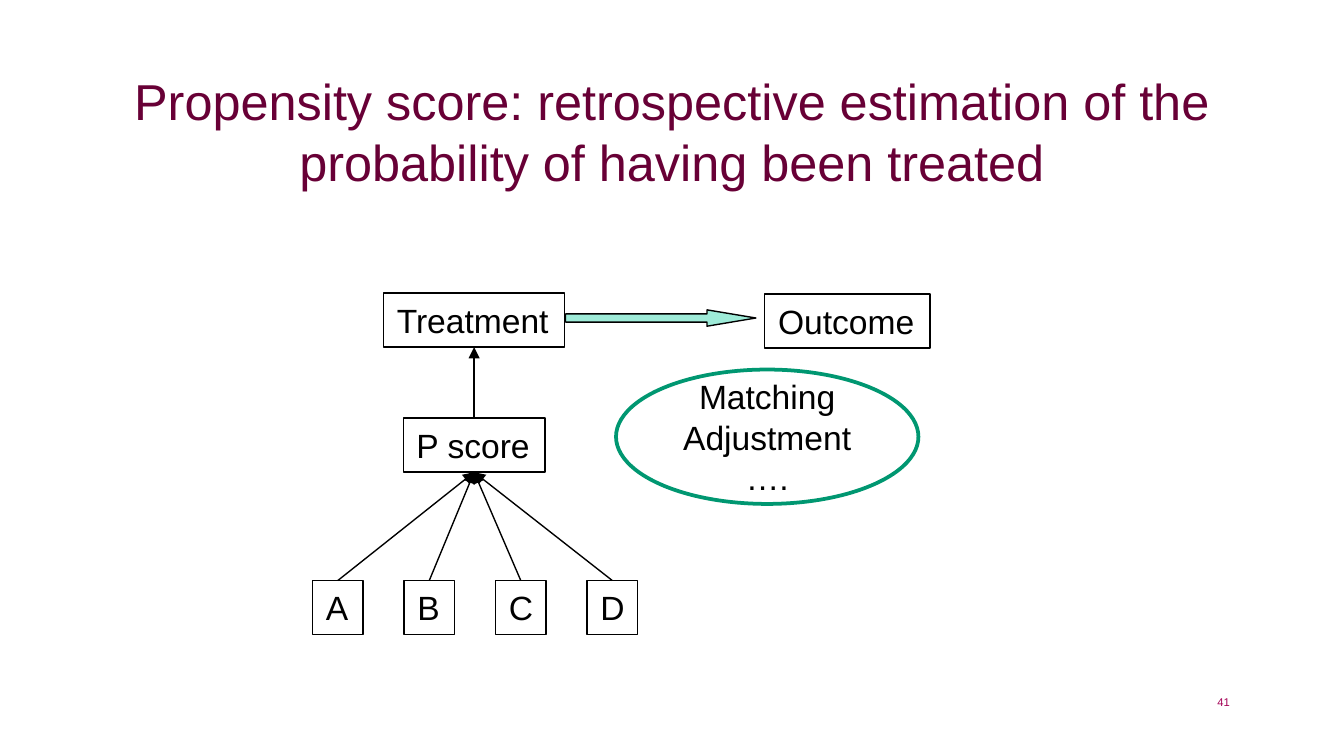
"""Build the propensity score slide."""
from lxml.etree import SubElement
from pptx import Presentation
from pptx.dml.color import RGBColor
from pptx.enum.shapes import MSO_CONNECTOR, MSO_SHAPE
from pptx.enum.text import MSO_ANCHOR, MSO_AUTO_SIZE, PP_ALIGN
from pptx.oxml.ns import qn
from pptx.util import Pt

COLORS = {
    "title": "680036",
    "number": "A40056",
    "ink": "000000",
    "arrow": "00CC99",
    "ring": "009771",
}
BOX_HEIGHT = 29
SCORE_CENTER = 254


def color(name):
    return RGBColor.from_string(COLORS[name])


def write(frame, text, size=18, ink="ink", align=PP_ALIGN.LEFT,
          anchor=MSO_ANCHOR.TOP, wrap=True):
    frame.auto_size = MSO_AUTO_SIZE.NONE
    frame.word_wrap = wrap
    frame.vertical_anchor = anchor
    frame.text = text
    for paragraph in frame.paragraphs:
        paragraph.alignment = align
        paragraph.font.name = "Arial"
        paragraph.font.size = Pt(size)
        paragraph.font.color.rgb = color(ink)


def place(shape, left, top, width, height):
    shape.left, shape.top = Pt(left), Pt(top)
    shape.width, shape.height = Pt(width), Pt(height)


def add_outline(slide, preset, left, top, width, height, line="ink", weight=0.75):
    shape = slide.shapes.add_shape(preset, Pt(left), Pt(top), Pt(width), Pt(height))
    shape.shadow.inherit = False
    shape.fill.background()
    shape.line.color.rgb = color(line)
    shape.line.width = Pt(weight)
    return shape


def add_box(slide, text, center, top, width):
    box = add_outline(slide, MSO_SHAPE.RECTANGLE, center - width / 2, top, width, BOX_HEIGHT)
    write(box.text_frame, text, wrap=False)


def add_link(slide, start, end):
    link = slide.shapes.add_connector(MSO_CONNECTOR.STRAIGHT, *map(Pt, start + end))
    link.line.color.rgb = color("ink")
    link.line.width = Pt(0.75)
    SubElement(link.line._get_or_add_ln(), qn("a:tailEnd"), type="triangle")
    SubElement(link._element.spPr, qn("a:effectLst"))


def add_effect_arrow(slide, left, top, width, height):
    arrow = add_outline(slide, MSO_SHAPE.RIGHT_ARROW, left, top, width, height)
    arrow.adjustments[0], arrow.adjustments[1] = 0.5, 2.99
    arrow.fill.solid()
    arrow.fill.fore_color.rgb = color("arrow")
    tint = arrow._element.spPr.find(qn("a:solidFill")).find(qn("a:srgbClr"))
    SubElement(tint, qn("a:alpha"), val="38000")


def main():
    deck = Presentation()
    deck.slide_width, deck.slide_height = Pt(720), Pt(405)
    slide = deck.slides.add_slide(deck.slide_layouts[5])

    title = slide.shapes.title
    place(title, 54, 36, 612, 68)
    write(title.text_frame,
          "Propensity score: retrospective estimation of the probability of having been treated",
          size=27, ink="title", align=PP_ALIGN.CENTER, anchor=MSO_ANCHOR.MIDDLE)

    page_number = slide.shapes.add_textbox(Pt(516), Pt(369), Pt(150), Pt(27))
    write(page_number.text_frame, "41", size=6, ink="number", align=PP_ALIGN.RIGHT)

    treatment_top, score_top, covariate_top = 157, 224, 311
    add_box(slide, "Treatment", SCORE_CENTER, treatment_top, 97)
    add_box(slide, "Outcome", 454, treatment_top + 0.5, 88.5)
    add_box(slide, "P score", SCORE_CENTER, score_top, 76)
    add_link(slide, (SCORE_CENTER, score_top), (SCORE_CENTER, treatment_top + BOX_HEIGHT))
    for index, covariate in enumerate("ABCD"):
        center = 181 + 49 * index
        add_box(slide, covariate, center, covariate_top, 27)
        add_link(slide, (center, covariate_top), (SCORE_CENTER, score_top + BOX_HEIGHT))

    add_effect_arrow(slide, 303, 166, 102, 8.75)
    methods = add_outline(slide, MSO_SHAPE.OVAL, 330, 198, 162, 72, line="ring", weight=2)
    write(methods.text_frame, "Matching\nAdjustment\n….",
          align=PP_ALIGN.CENTER, anchor=MSO_ANCHOR.MIDDLE)

    deck.save("out.pptx")


if __name__ == "__main__":
    main()
